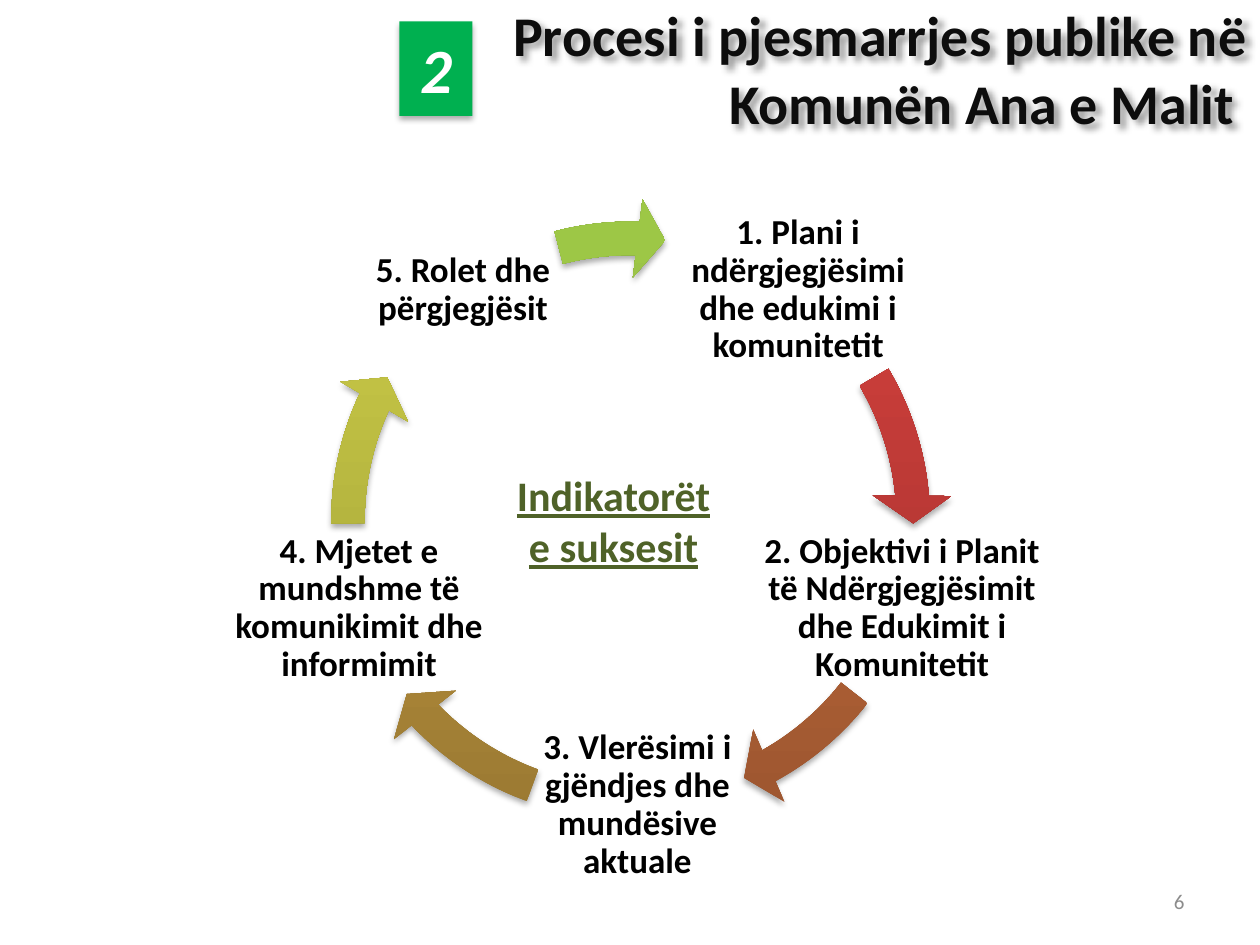
import pptx
import pptx.dml.color
import pptx.enum.shapes
import pptx.enum.text
import pptx.oxml
import pptx.oxml.ns
import pptx.util
from pptx.util import Inches

SHAPE = pptx.enum.shapes.MSO_SHAPE
ALIGN = pptx.enum.text.PP_ALIGN
DRAWING_NS = pptx.oxml.ns.nsdecls("a")

# label, label box, arrow corner, arrow (tip, tail) adjustments, gradient from dark to light
STEPS = [
    ("1. Plani i ndërgjegjësimi dhe edukimi i komunitetit",
     (5.28, 1.62, 2.11), (2.45, 1.58), (212.926, 197.668), ("9C2F2D", "CB3E3A", "CE3B37")),
    ("2. Objektivi i Planit të Ndërgjegjësimit dhe Edukimit i Komunitetit",
     (6.01, 4.15, 2.3), (2.46, 1.56), (36.606, 22.874), ("9B552F", "C96E3D", "CD6E3B")),
    ("3. Vlerësimi i gjëndjes dhe mundësive aktuale",
     (4.21, 5.71, 1.7), (2.44, 1.57), (81.797, 66.027), ("997832", "C79C41", "CB9D3F")),
    ("4. Mjetet e mundshme të komunikimit dhe informimit",
     (1.78, 4.15, 2.14), (2.45, 1.58), (122.971, 107.714), ("989835", "C5C545", "C8C942")),
    ("5. Rolet dhe përgjegjësit",
     (2.92, 1.62, 1.51), (2.45, 1.58), (162.863, 153.166), ("779737", "9BC348", "9DC746")),
]
LABEL_HEIGHT = 1.36
RING_SIZE = 5.11


def rgb(hex_color):
    return pptx.dml.color.RGBColor.from_string(hex_color)


def write(shape, text, size, color, align, bold=True, inset=None):
    frame = shape.text_frame
    frame.word_wrap = True
    frame.auto_size = pptx.enum.text.MSO_AUTO_SIZE.NONE
    frame.vertical_anchor = pptx.enum.text.MSO_ANCHOR.MIDDLE
    if inset is not None:
        frame.margin_left = frame.margin_right = Inches(inset)
        frame.margin_top = frame.margin_bottom = Inches(inset)
    frame.text = text
    paragraph = frame.paragraphs[0]
    paragraph.alignment = align
    font = paragraph.font
    font.name = "Calibri"
    font.size = pptx.util.Pt(size)
    font.bold = bold
    font.color.rgb = rgb(color)
    return paragraph


def add_shadow(shape, blur=3.5, distance=2.2, angle=90, opacity=32):
    """Give the shape an outer shadow: points, degrees and percent."""
    shape.shadow.inherit = False
    effects = shape._element.spPr.find(pptx.oxml.ns.qn("a:effectLst"))
    effects.append(pptx.oxml.parse_xml(
        f'<a:outerShdw {DRAWING_NS} blurRad="{pptx.util.Pt(blur)}" '
        f'dist="{pptx.util.Pt(distance)}" dir="{angle * 60000}" rotWithShape="0">'
        f'<a:srgbClr val="000000"><a:alpha val="{opacity * 1000}"/></a:srgbClr>'
        '</a:outerShdw>'))


def fill_gradient(shape, colors):
    """Blend three colours upwards, the last two close to the top."""
    shape.fill.gradient()
    shape.fill.gradient_angle = 90
    stops = shape._element.spPr.find(".//" + pptx.oxml.ns.qn("a:gsLst"))
    for stop in list(stops):
        stops.remove(stop)
    for position, color in zip((0, 80, 100), colors):
        stops.append(pptx.oxml.parse_xml(
            f'<a:gs {DRAWING_NS} pos="{position * 1000}"><a:srgbClr val="{color}"/></a:gs>'))


def add_title(slide, text):
    title = slide.shapes.title
    title.left, title.top = Inches(2.67), Inches(0)
    title.width, title.height = Inches(7.33), Inches(1.08)
    write(title, text, 32, "0D0D0D", ALIGN.RIGHT)
    add_shadow(title, blur=4, distance=3, angle=45, opacity=40)


def add_chapter_number(slide, number):
    badge = slide.shapes.add_shape(
        SHAPE.RECTANGLE, Inches(3.17), Inches(0.17), Inches(0.58), Inches(0.75))
    badge.fill.solid()
    badge.fill.fore_color.rgb = rgb("00B050")
    badge.line.fill.background()
    add_shadow(badge)
    write(badge, number, 36, "FFFFFF", ALIGN.CENTER).font.italic = True


def add_step_label(slide, text, left, top, width):
    label = slide.shapes.add_textbox(
        Inches(left), Inches(top), Inches(width), Inches(LABEL_HEIGHT))
    write(label, text, 20, "000000", ALIGN.CENTER, inset=0.03).line_spacing = 0.9


def add_cycle_arrow(slide, corner, tip, tail, colors):
    left, top = corner
    arrow = slide.shapes.add_shape(
        SHAPE.CIRCULAR_ARROW, Inches(left), Inches(top), Inches(RING_SIZE), Inches(RING_SIZE))
    for index, value in enumerate((0.052, 3.361, tip, tail, 0.061)):
        arrow.adjustments[index] = value
    fill_gradient(arrow, colors)
    arrow.line.fill.background()
    add_shadow(arrow)


def add_cycle_center(slide, text):
    center = slide.shapes.add_shape(
        SHAPE.OVAL, Inches(3.58), Inches(3.42), Inches(2.58), Inches(1.42))
    center.fill.background()
    center.line.fill.background()
    center.shadow.inherit = False
    write(center, text, 24, "4F6228", ALIGN.CENTER).font.underline = True


def add_page_number(slide, number):
    page = slide.shapes.add_textbox(Inches(7.17), Inches(6.95), Inches(2.33), Inches(0.4))
    write(page, number, 12, "8C8C8C", ALIGN.RIGHT, bold=False)


def main():
    deck = pptx.Presentation()
    deck.slide_width, deck.slide_height = Inches(10), Inches(7.5)
    slide = deck.slides.add_slide(deck.slide_layouts[5])
    add_title(slide, "Procesi i pjesmarrjes publike në Komunën Ana e Malit ")
    add_chapter_number(slide, "2")
    for text, label_box, corner, (tip, tail), colors in STEPS:
        add_step_label(slide, text, *label_box)
        add_cycle_arrow(slide, corner, tip, tail, colors)
    add_cycle_center(slide, "Indikatorët e suksesit")
    add_page_number(slide, "6")
    deck.save("out.pptx")


if __name__ == "__main__":
    main()
